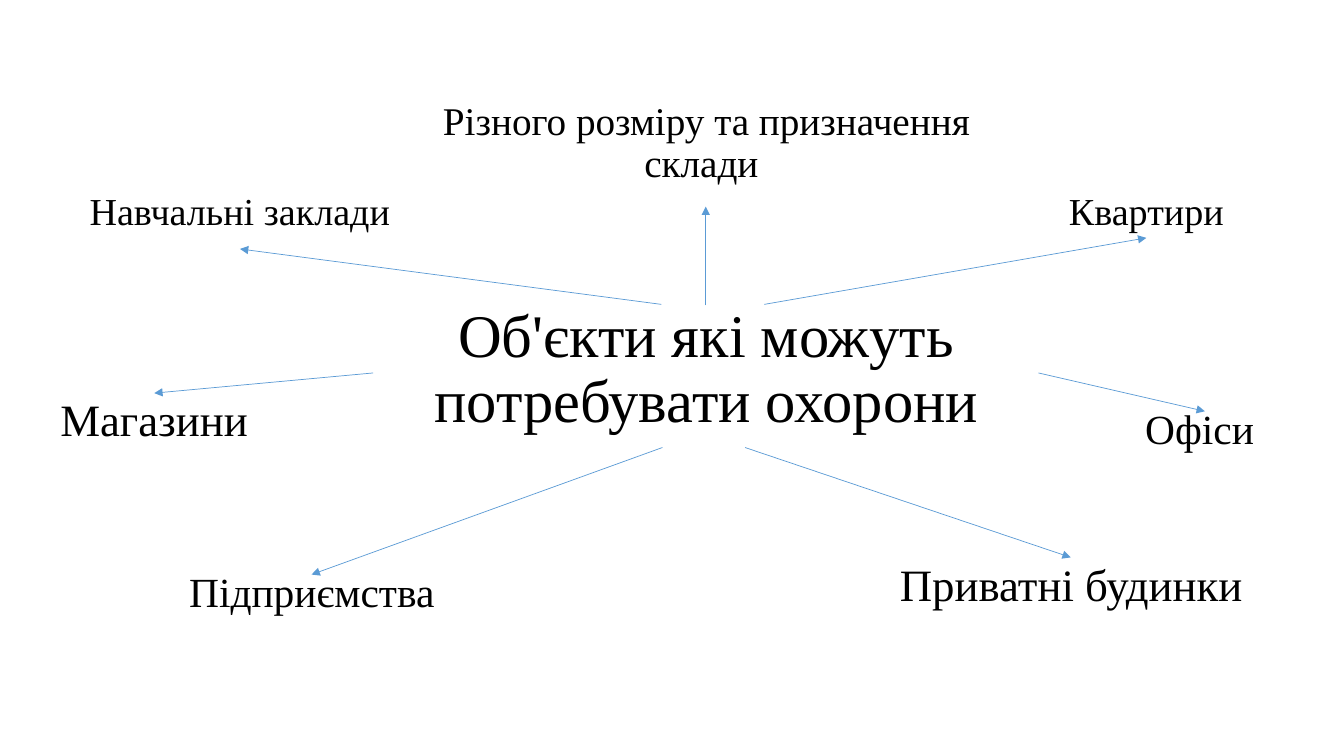
from lxml import etree
from pptx import Presentation
from pptx.dml.color import RGBColor
from pptx.enum import shapes, text
from pptx.oxml import ns
from pptx.util import Inches, Pt

BLACK = RGBColor(0x00, 0x00, 0x00)
BLUE = RGBColor(0x5B, 0x9B, 0xD5)
FONT_NAME = "Times New Roman"

TITLE = ("Об'єкти які можуть потребувати охорони", (3.7, 3.03, 6.61, 1.34), 43.2, 0.9)

# Wording, (left, top, width, height), text size, line spacing, arrow start, arrow end
OBJECTS = [
    ("Різного розміру та призначення склади ", (4.28, 0.96, 5.45, 1.09), 28, 0.9,
     (7, 3.03), (7, 2.05)),
    ("Приватні будинки", (8.82, 5.53, 3.61, 0.54), 32, 0.9, (7.39, 4.44), (10.62, 5.53)),
    ("Магазини", (0.25, 3.9, 2.56, 0.64), 32, 0.9, (3.7, 3.7), (1.53, 3.9)),
    ("Навчальні заклади", (0.78, 1.9, 3.2, 0.57), 27.2, 0.8, (6.56, 3.02), (2.38, 2.47)),
    ("Підприємства", (1.69, 5.7, 2.81, 0.47), 29.6, 0.7, (6.57, 4.44), (3.09, 5.7)),
    ("Офіси ", (10.91, 4.08, 2.08, 0.46), 29.6, 0.7, (10.3, 3.7), (11.95, 4.08)),
    ("Квартири", (10.31, 1.93, 2.12, 0.43), 27.2, 0.7, (7.58, 3.02), (11.37, 2.36)),
]


def set_attributes(target, values):
    for name, value in values.items():
        setattr(target, name, value)


def add_label(page, wording, area, size, spacing, before=10, anchor=text.MSO_ANCHOR.TOP):
    box = page.shapes.add_textbox(*map(Inches, area))
    frame = box.text_frame
    set_attributes(frame, {"word_wrap": True, "vertical_anchor": anchor})
    para = frame.paragraphs[0]
    set_attributes(para, {"alignment": text.PP_ALIGN.CENTER, "line_spacing": spacing,
                          "space_before": Pt(before)})
    span = para.add_run()
    span.text = wording
    set_attributes(span.font, {"name": FONT_NAME, "size": Pt(size)})
    span.font.color.rgb = BLACK


def add_arrow(page, start, end):
    arrow = page.shapes.add_connector(shapes.MSO_CONNECTOR.STRAIGHT,
                                      *map(Inches, start + end))
    arrow.line.width = Pt(0.5)
    arrow.line.color.rgb = BLUE
    outline = arrow.line._get_or_add_ln()
    etree.SubElement(outline, ns.qn("a:tailEnd"), type="triangle")
    etree.SubElement(outline.getparent(), ns.qn("a:effectLst"))


def main():
    deck = Presentation()
    set_attributes(deck, {"slide_width": Inches(13.33), "slide_height": Inches(7.5)})
    page = deck.slides.add_slide(deck.slide_layouts[6])
    add_label(page, *TITLE, before=0, anchor=text.MSO_ANCHOR.BOTTOM)
    for wording, area, size, spacing, start, end in OBJECTS:
        add_label(page, wording, area, size, spacing)
        add_arrow(page, start, end)
    deck.save("out.pptx")


if __name__ == "__main__":
    main()
